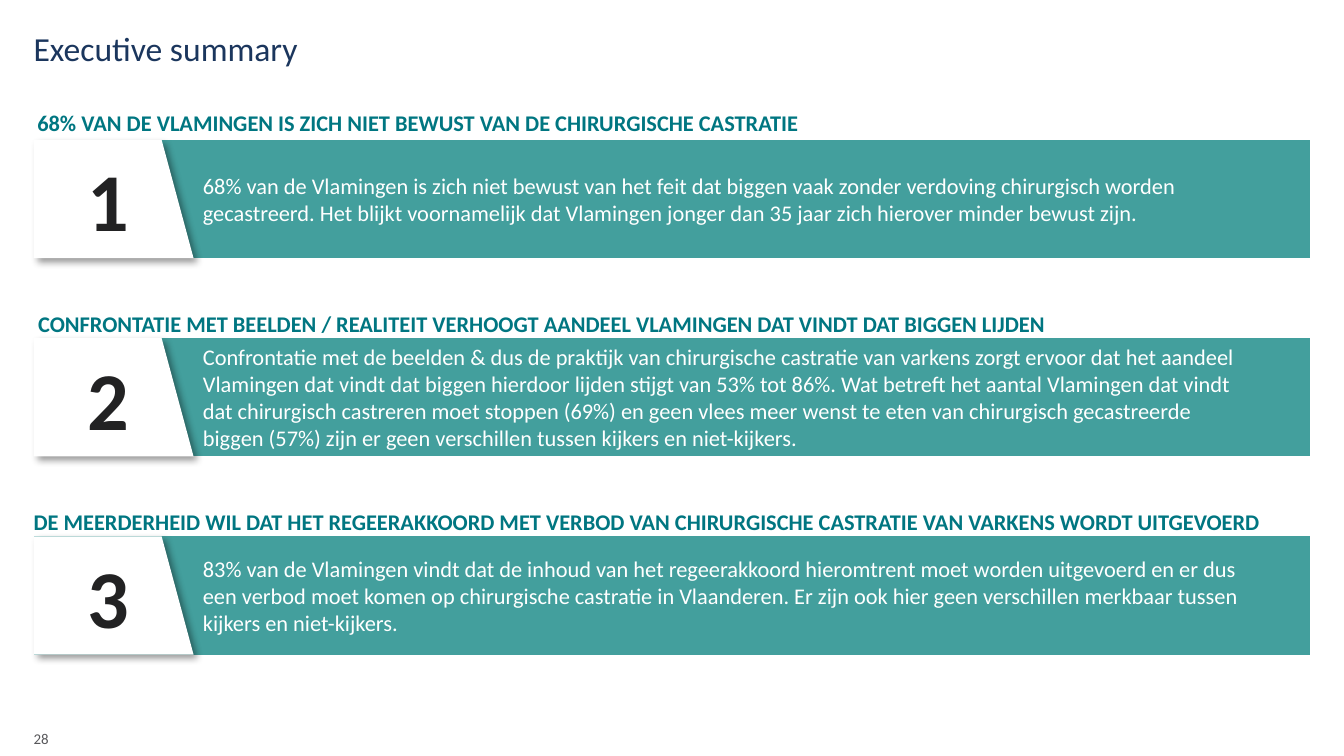
from dataclasses import dataclass
from typing import Any

from lxml import etree
from pptx import Presentation
from pptx.dml.color import RGBColor
from pptx.enum.shapes import MSO_SHAPE
from pptx.enum.text import MSO_ANCHOR, MSO_AUTO_SIZE, PP_ALIGN
from pptx.oxml.ns import qn
from pptx.util import Pt

BAR_SHAPE = MSO_SHAPE.FLOWCHART_PROCESS
TAB_SHAPE = MSO_SHAPE.FLOWCHART_MANUAL_INPUT
TOP, MIDDLE, BOTTOM = MSO_ANCHOR.TOP, MSO_ANCHOR.MIDDLE, MSO_ANCHOR.BOTTOM
LEFT, CENTER = PP_ALIGN.LEFT, PP_ALIGN.CENTER
FIXED_SIZE = MSO_AUTO_SIZE.NONE

COLORS = {
    "title": "1B365D",
    "heading": "007681",
    "bar": "439F9D",
    "white": "FFFFFF",
    "number": "222223",
    "footer": "58585B",
    "shadow": "000000",
}
MARGIN = 18
BAR_TOP, BAR_STEP = 74.9, 106.2
BAR_WIDTH, BAR_HEIGHT = 684, 63.4
TAB_WIDTH = 85.7


@dataclass(frozen=True)
class Section:
    heading: str
    summary: str
    heading_left: float
    heading_width: float
    heading_rise: float


@dataclass(frozen=True)
class TextStyle:
    size: float
    color: str
    bold: bool = False
    align: Any = LEFT
    anchor: Any = TOP
    insets: tuple[float, float, float, float] = (0, 0, 0, 0)
    wrap: bool = True


SECTIONS = [
    Section(
        "68% VAN DE VLAMINGEN IS ZICH NIET BEWUST VAN DE CHIRURGISCHE CASTRATIE",
        "68% van de Vlamingen is zich niet bewust van het feit dat biggen vaak zonder "
        "verdoving chirurgisch worden gecastreerd. Het blijkt voornamelijk dat Vlamingen "
        "jonger dan 35 jaar zich hierover minder bewust zijn.",
        20, 490, 16.3,
    ),
    Section(
        "CONFRONTATIE MET BEELDEN / REALITEIT VERHOOGT AANDEEL VLAMINGEN DAT VINDT DAT BIGGEN LIJDEN",
        "Confrontatie met de beelden & dus de praktijk van chirurgische castratie van varkens "
        "zorgt ervoor dat het aandeel Vlamingen dat vindt dat biggen hierdoor lijden stijgt van "
        "53% tot 86%. Wat betreft het aantal Vlamingen dat vindt dat chirurgisch castreren moet "
        "stoppen (69%) en geen vlees meer wenst te eten van chirurgisch gecastreerde biggen (57%) "
        "zijn er geen verschillen tussen kijkers en niet-kijkers.",
        20.5, 585, 15.2,
    ),
    Section(
        "DE MEERDERHEID WIL DAT HET REGEERAKKOORD MET VERBOD VAN CHIRURGISCHE CASTRATIE VAN VARKENS WORDT UITGEVOERD",
        "83% van de Vlamingen vindt dat de inhoud van het regeerakkoord hieromtrent moet worden "
        "uitgevoerd en er dus een verbod moet komen op chirurgische castratie in Vlaanderen. Er "
        "zijn ook hier geen verschillen merkbaar tussen kijkers en niet-kijkers.",
        18, 725, 15.2,
    ),
]

TITLE = TextStyle(18, "title")
HEADING = TextStyle(12, "heading", bold=True)
SUMMARY = TextStyle(12, "white", anchor=MIDDLE, insets=(90.7, 0, 28.1, 0))
NUMBER = TextStyle(44, "number", bold=True, align=CENTER, anchor=MIDDLE, insets=(0, 0, 0, 11.5))
FOOTER = TextStyle(8, "footer", anchor=BOTTOM, wrap=False)


def apply_format(target: Any, values: dict[str, Any]) -> None:
    for name, value in values.items():
        setattr(target, name, value)


def write_text(box: Any, text: str, style: TextStyle) -> Any:
    frame = box.text_frame
    sides = ("margin_left", "margin_top", "margin_right", "margin_bottom")
    apply_format(frame, {side: Pt(inset) for side, inset in zip(sides, style.insets)})
    apply_format(frame, {
        "word_wrap": style.wrap,
        "auto_size": FIXED_SIZE,
        "vertical_anchor": style.anchor,
    })
    para = frame.paragraphs[0]
    para.alignment = style.align
    span = para.add_run()
    span.text = text
    apply_format(span.font, {"name": "Calibri", "size": Pt(style.size), "bold": style.bold})
    span.font.color.rgb = RGBColor.from_string(COLORS[style.color])
    return para


def add_text(page: Any, left: float, top: float, width: float, height: float,
             text: str, style: TextStyle) -> Any:
    box = page.shapes.add_textbox(Pt(left), Pt(top), Pt(width), Pt(height))
    return write_text(box, text, style)


def add_panel(shapes: Any, kind: Any, left: float, top: float, width: float,
              height: float, color: str) -> Any:
    box = shapes.add_shape(kind, Pt(left), Pt(top), Pt(width), Pt(height))
    box.fill.solid()
    box.fill.fore_color.rgb = RGBColor.from_string(COLORS[color])
    box.line.fill.background()
    box.shadow.inherit = False
    return box


def add_shadow(box: Any) -> None:
    effects = box.element.spPr.find(qn("a:effectLst"))
    shadow = etree.SubElement(effects, qn("a:outerShdw"), {
        "blurRad": str(Pt(4)), "dist": str(Pt(3)), "dir": str(45 * 60000),
        "algn": "tl", "rotWithShape": "0",
    })
    color = etree.SubElement(shadow, qn("a:srgbClr"), val=COLORS["shadow"])
    etree.SubElement(color, qn("a:alpha"), val="40000")


def add_section(page: Any, number: int, section: Section) -> None:
    top = BAR_TOP + (number - 1) * BAR_STEP
    group = page.shapes.add_group_shape()
    bar = add_panel(group.shapes, BAR_SHAPE, MARGIN, top, BAR_WIDTH, BAR_HEIGHT, "bar")
    write_text(bar, section.summary, SUMMARY)

    turn_shift = (TAB_WIDTH - BAR_HEIGHT) / 2
    tab = add_panel(group.shapes, TAB_SHAPE, MARGIN + turn_shift, top - turn_shift,
                    BAR_HEIGHT, TAB_WIDTH, "white")
    tab.rotation = 90
    add_shadow(tab)
    write_text(tab, str(number), NUMBER)
    tab.element.txBody.bodyPr.set("vert", "vert270")

    add_text(page, section.heading_left, top - section.heading_rise,
             section.heading_width, 14.4, section.heading, HEADING)


def main() -> None:
    deck = Presentation()
    apply_format(deck, {"slide_width": Pt(720), "slide_height": Pt(405)})
    page = deck.slides.add_slide(deck.slide_layouts[5])
    title = page.shapes.title
    apply_format(title, {"left": Pt(MARGIN), "top": Pt(15.1), "width": Pt(529), "height": Pt(42.5)})
    write_text(title, "Executive summary", TITLE)
    for number, section in enumerate(SECTIONS, start=1):
        add_section(page, number, section)
    footer = add_text(page, MARGIN, 381.6, 24.5, 18.7, "28", FOOTER)
    footer.line_spacing = 0.85
    deck.save("out.pptx")


if __name__ == "__main__":
    main()
